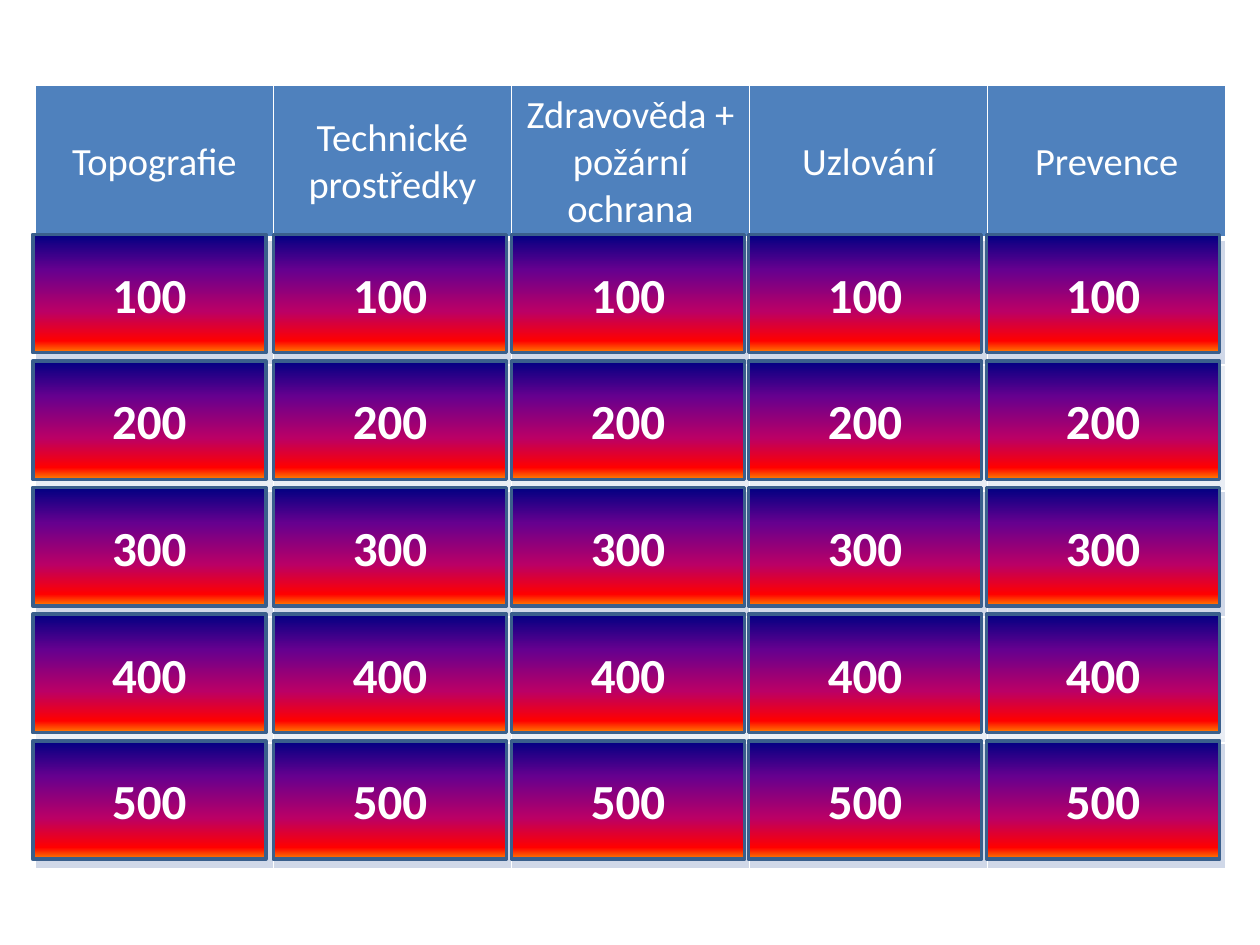
"""Build a quiz board with five categories and five point levels."""
from dataclasses import dataclass

from pptx import Presentation
from pptx.dml.color import RGBColor
from pptx.enum.shapes import MSO_SHAPE
from pptx.enum.text import MSO_ANCHOR as Anchor, PP_ALIGN as Align
from pptx.oxml.ns import qn
from pptx.oxml.xmlchemy import OxmlElement as Element
from pptx.util import Inches, Pt

FONT = "Calibri"
WHITE = "FFFFFF"
HEADER_FILL = "4F81BD"
BAND_FILLS = ("E9EDF4", "D0D8E8")
TILE_LINE = "3A5F8C"
TILE_STOPS = ((0, "000082"), (30, "66008F"), (65, "BA0066"), (90, "FF0000"), (100, "FF8200"))
CATEGORIES = ("Topografie", "Technické prostředky", "Zdravověda + požární ochrana",
              "Uzlování", "Prevence")
POINTS = (100, 200, 300, 400, 500)
COLUMN_WIDTH = 1.89
HEADER_HEIGHT, ROW_HEIGHT = 1.1, 1.0
TILE_LEFTS = (0.26, 2.17, 4.06, 5.94, 7.83)
FIRST_TILE_TOP, LAST_TILE_TOP = 1.86, 5.88


@dataclass
class Tile:
    left: float
    top: float
    points: int
    width: float = 1.85
    height: float = 0.94


def color(value: str) -> RGBColor:
    return RGBColor.from_string(value)


def style_text(text_frame, size: float, bold: bool) -> None:
    paragraph = text_frame.paragraphs[0]
    paragraph.alignment = Align.CENTER
    font = paragraph.runs[0].font
    font.name, font.size, font.bold = FONT, Pt(size), bold
    font.color.rgb = color(WHITE)


def color_element(value: str):
    element = Element("a:srgbClr")
    element.set("val", value)
    return element


def set_borders(cell, widths: dict[str, float]) -> None:
    properties = cell._tc.get_or_add_tcPr()
    for position, (side, width) in enumerate(widths.items()):
        border = Element(f"a:ln{side}")
        border.set("w", str(Pt(width)))
        fill = Element("a:solidFill")
        fill.append(color_element(WHITE))
        border.append(fill)
        properties.insert(position, border)


def set_gradient(fill) -> None:
    fill.gradient()
    fill.gradient_angle = 270
    stop_list = fill._xPr.find(qn("a:gradFill")).find(qn("a:gsLst"))
    for stop in list(stop_list):
        stop_list.remove(stop)
    for percent, value in TILE_STOPS:
        stop = Element("a:gs")
        stop.set("pos", str(percent * 1000))
        stop.append(color_element(value))
        stop_list.append(stop)


def add_category_table(slide) -> None:
    row_count = len(POINTS) + 1
    board = slide.shapes.add_table(
        row_count, len(CATEGORIES), Inches(0.28), Inches(0.68),
        Inches(COLUMN_WIDTH * len(CATEGORIES)),
        Inches(HEADER_HEIGHT + ROW_HEIGHT * len(POINTS))).table
    for column in board.columns:
        column.width = Inches(COLUMN_WIDTH)
    for index, row in enumerate(board.rows):
        row.height = Inches(ROW_HEIGHT if index else HEADER_HEIGHT)
        for cell, category in zip(row.cells, CATEGORIES):
            cell.fill.solid()
            cell.fill.fore_color.rgb = color(BAND_FILLS[index % 2] if index else HEADER_FILL)
            set_borders(cell, {"L": 1, "R": 1, "T": 3 if index == 1 else 1,
                               "B": 1 if index else 3})
            if index == 0:
                cell.text_frame.text = category
                cell.vertical_anchor = Anchor.MIDDLE
                style_text(cell.text_frame, 22, False)


def add_tile(slide, tile: Tile) -> None:
    button = slide.shapes.add_shape(
        MSO_SHAPE.RECTANGLE, Inches(tile.left), Inches(tile.top),
        Inches(tile.width), Inches(tile.height))
    button.shadow.inherit = False
    set_gradient(button.fill)
    button.line.color.rgb = color(TILE_LINE)
    button.line.width = Pt(2)
    button.text_frame.text = str(tile.points)
    button.text_frame.vertical_anchor = Anchor.MIDDLE
    style_text(button.text_frame, 28, True)


def main() -> None:
    presentation = Presentation()
    presentation.slide_width, presentation.slide_height = Inches(10), Inches(7.5)
    slide = presentation.slides.add_slide(presentation.slide_layouts[6])
    add_category_table(slide)
    pitch = (LAST_TILE_TOP - FIRST_TILE_TOP) / (len(POINTS) - 1)
    for left in TILE_LEFTS:
        for level, points in enumerate(POINTS):
            add_tile(slide, Tile(left, FIRST_TILE_TOP + level * pitch, points))
    presentation.save("out.pptx")


if __name__ == "__main__":
    main()
